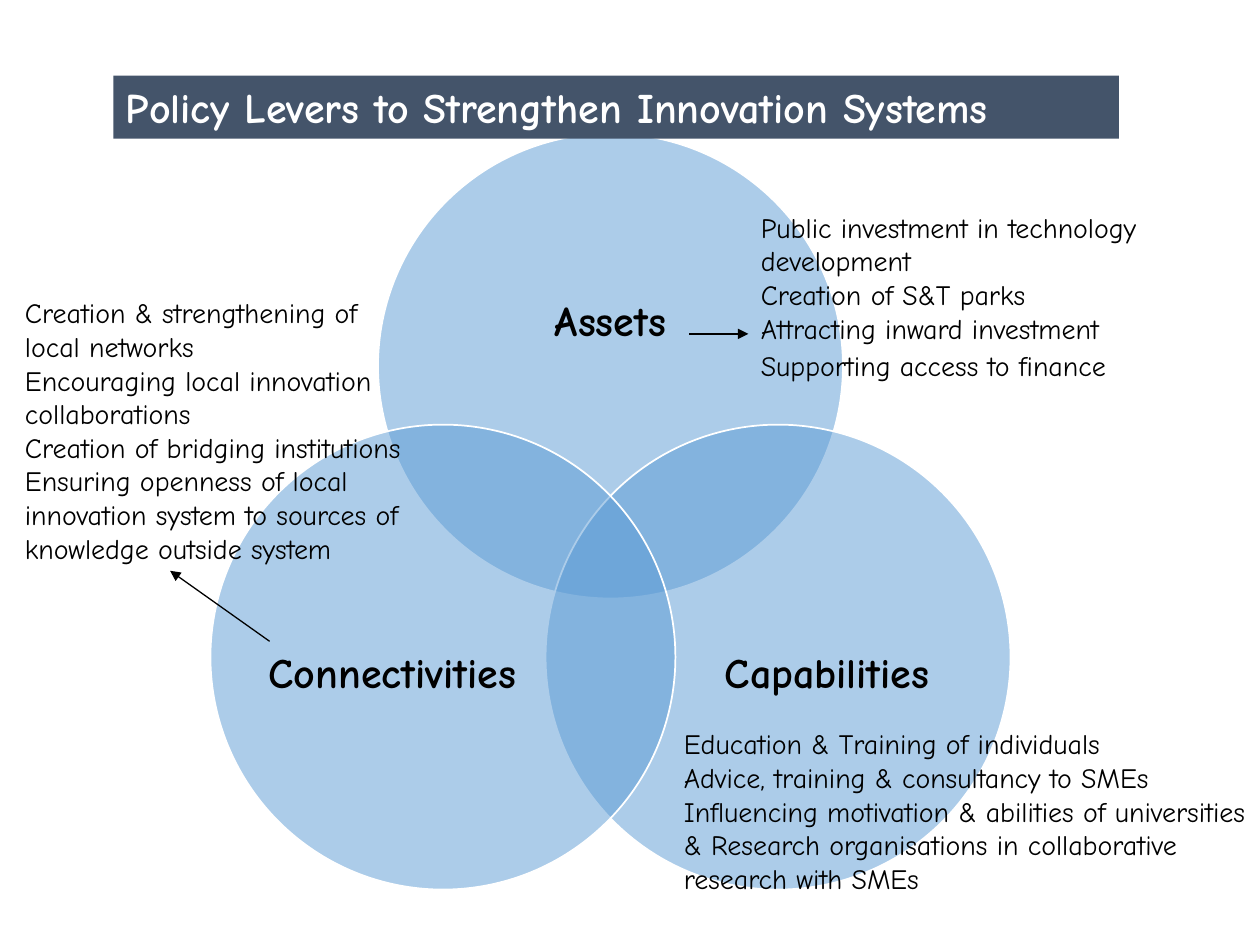
"""Build a Venn slide of policy levers for innovation systems."""
from pptx import Presentation
from pptx import util as u
from pptx.dml.color import RGBColor
from pptx.enum import shapes, text
from pptx.oxml.ns import qn
from lxml import etree

BLACK = RGBColor(0x00, 0x00, 0x00)
WHITE = RGBColor(0xFF, 0xFF, 0xFF)
BLUE = RGBColor(0x5B, 0x9B, 0xD5)
SLATE = RGBColor(0x44, 0x54, 0x6A)

DIAMETER = 3.69
CIRCLES = [
    ("Assets", (3, 1.06), (3.49, 1.71, 2.71, 1.66)),
    ("Capabilities", (4.33, 3.37), (5.46, 4.32, 2.21, 2.03)),
    ("Connectivities", (1.67, 3.37), (2.01, 4.32, 2.21, 2.03)),
]
ASSETS = [
    "Public investment in technology",
    "development",
    "Creation of S&T parks",
    "Attracting inward investment",
    "Supporting access to finance",
]
CAPABILITIES = [
    "Education & Training of individuals",
    "Advice, training & consultancy to SMEs",
    "Influencing motivation & abilities of universities "
    "& Research organisations in collaborative research with SMEs",
]
CONNECTIVITIES = [
    "Creation & strengthening of",
    "local networks",
    "Encouraging local innovation",
    "collaborations",
    "Creation of bridging institutions",
    "Ensuring openness of local",
    "innovation system to sources of",
    "knowledge outside system",
]


def add_run(p, content, size=16, color=BLACK, bold=False, font="Comic Neue"):
    r = p.add_run()
    r.text = content
    r.font.name = font
    r.font.size = u.Pt(size)
    r.font.bold = bold
    r.font.color.rgb = color


class Deck:
    def __init__(self, s):
        self.s = s

    def add_lines(self, sp, lines, align=text.PP_ALIGN.LEFT, **style):
        tf = sp.text_frame
        tf.word_wrap = True
        for i, line in enumerate(lines):
            p = tf.paragraphs[0] if i == 0 else tf.add_paragraph()
            p.alignment = align
            add_run(p, line, **style)
        return tf

    def textbox(self, box, lines, **style):
        sp = self.s.shapes.add_textbox(*map(u.Inches, box))
        return self.add_lines(sp, lines, **style)

    def label(self, box, content):
        tf = self.textbox(box, [content], align=text.PP_ALIGN.CENTER,
                          size=24, bold=True)
        tf.vertical_anchor = text.MSO_ANCHOR.MIDDLE
        tf.margin_left = tf.margin_right = tf.margin_top = tf.margin_bottom = 0

    def shape(self, kind, box, fill):
        sp = self.s.shapes.add_shape(kind, *map(u.Inches, box))
        sp.shadow.inherit = False
        sp.fill.solid()
        sp.fill.fore_color.rgb = fill
        sp.line.fill.background()
        return sp

    def circle(self, left, top):
        sp = self.shape(shapes.MSO_SHAPE.OVAL, (left, top, DIAMETER, DIAMETER), BLUE)
        sp.line.color.rgb = WHITE
        sp.line.width = u.Pt(1)
        color = sp._element.spPr.find(qn("a:solidFill"))[0]
        etree.SubElement(color, qn("a:alpha"), val="50000")

    def banner(self, box, content):
        sp = self.shape(shapes.MSO_SHAPE.RECTANGLE, box, SLATE)
        self.add_lines(sp, [content], size=24, color=WHITE, bold=True)

    def arrow(self, start, end):
        c = self.s.shapes.add_connector(shapes.MSO_CONNECTOR.STRAIGHT,
                                        *map(u.Inches, start + end))
        c.line.color.rgb = BLACK
        c.line.width = u.Pt(0.75)
        props = c._element.spPr
        etree.SubElement(props.find(qn("a:ln")), qn("a:tailEnd"), type="triangle")
        etree.SubElement(props, qn("a:effectLst"))


def main():
    prs = Presentation()
    prs.slide_width, prs.slide_height = u.Inches(10), u.Inches(7.5)
    deck = Deck(prs.slides.add_slide(prs.slide_layouts[6]))

    for name, corner, label_box in CIRCLES:
        deck.circle(*corner)
        deck.label(label_box, name)

    tf = deck.textbox((5.94, 1.62, 3.49, 1.47), ASSETS)
    add_run(tf.paragraphs[-1], " ", size=18)
    deck.textbox((5.33, 5.72, 4.67, 1.45), CAPABILITIES)
    deck.textbox((0.1, 2.3, 3.53, 2.51), CONNECTIVITIES)

    deck.arrow((2.14, 5.09), (1.35, 4.53))
    deck.banner((0.9, 0.6, 7.98, 0.5),
                "Policy Levers to Strengthen Innovation Systems")
    deck.arrow((5.47, 2.65), (5.94, 2.65))
    prs.save("out.pptx")


if __name__ == "__main__":
    main()
